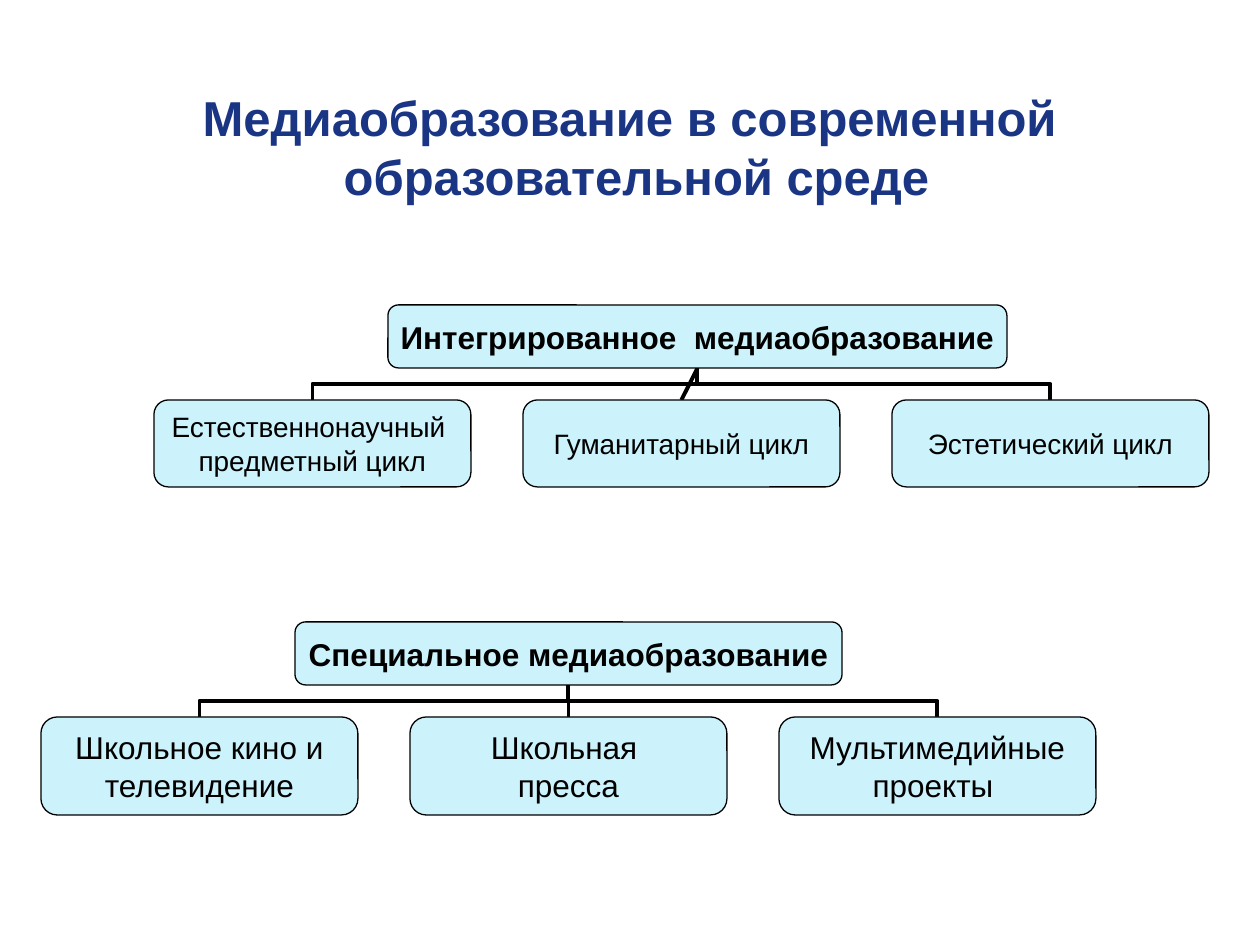
from lxml import etree
from pptx import Presentation
from pptx.dml.color import RGBColor
from pptx.enum.shapes import MSO_CONNECTOR, MSO_SHAPE
from pptx.enum.text import MSO_ANCHOR, PP_ALIGN
from pptx.oxml.ns import qn
from pptx.util import Emu, Pt

ROUNDED = MSO_SHAPE.ROUNDED_RECTANGLE
STRAIGHT, ELBOW = MSO_CONNECTOR.STRAIGHT, MSO_CONNECTOR.ELBOW
CENTER, MIDDLE = PP_ALIGN.CENTER, MSO_ANCHOR.MIDDLE
TOP_SIDE, BOTTOM_SIDE = 0, 2
EMU_PER_PX = 914400 // 126
QUARTER_TURN = "5400000"
BACK_OF_TREE = 2


def px(length):
    return Emu(round(length * EMU_PER_PX))


def color(hex_string):
    return RGBColor.from_string(hex_string)


class Diagram:
    font_name = "Arial"
    title_color = "193583"
    ink = "000000"
    box_fill = "CCF3FB"
    child_width = 317
    child_pitch = 369
    parent_height = 63

    def __init__(self, slide):
        self.slide = slide

    def set_text(self, shape, text, size, hex_color, bold=False, wrap=False):
        frame = shape.text_frame
        frame.word_wrap = wrap
        frame.vertical_anchor = MIDDLE
        frame.text = text
        for paragraph in frame.paragraphs:
            paragraph.alignment = CENTER
            paragraph.font.name = self.font_name
            paragraph.font.size = Pt(size)
            paragraph.font.bold = bold
            paragraph.font.color.rgb = color(hex_color)

    def title(self, text, left, top, width, height):
        box = self.slide.shapes.add_textbox(px(left), px(top), px(width), px(height))
        self.set_text(box, text, 28, self.title_color, bold=True, wrap=True)

    def box(self, text, left, top, width, height, size, bold=False):
        shape = self.slide.shapes.add_shape(
            ROUNDED, px(left), px(top), px(width), px(height))
        shape.shadow.inherit = False
        shape.fill.solid()
        shape.fill.fore_color.rgb = color(self.box_fill)
        shape.line.color.rgb = color(self.ink)
        shape.line.width = Pt(0.75)
        self.set_text(shape, text, size, self.ink, bold)
        return shape

    def connector(self, kind, begin_x, begin_y, end_x, end_y):
        """Add a line behind the boxes."""
        line = self.slide.shapes.add_connector(
            kind, Emu(begin_x), Emu(begin_y), Emu(end_x), Emu(end_y))
        line.line.color.rgb = color(self.ink)
        line.line.width = Pt(2.25)
        element = line._element
        etree.SubElement(element.spPr, qn("a:effectLst"))
        self.slide.shapes._spTree.insert(BACK_OF_TREE, element)
        return line

    def straight(self, parent, child):
        line = self.connector(STRAIGHT, 0, 0, 0, 0)
        line.begin_connect(child, TOP_SIDE)
        line.end_connect(parent, BOTTOM_SIDE)

    def elbow(self, parent, child):
        """Join parent and child by a down-across-down line: an elbow turned by 90 degrees."""
        start_x, start_y = parent.left + parent.width // 2, parent.top + parent.height
        end_x, end_y = child.left + child.width // 2, child.top
        middle_x, middle_y = (start_x + end_x) // 2, (start_y + end_y) // 2
        half_across, half_down = (end_x - start_x) // 2, (end_y - start_y) // 2
        line = self.connector(
            ELBOW, middle_x - half_down, middle_y + half_across,
            middle_x + half_down, middle_y - half_across)
        line._element.spPr.find(qn("a:xfrm")).set("rot", QUARTER_TURN)

    def tree(self, heading, heading_left, heading_top, heading_width,
             labels, left, top, height, size):
        parent = self.box(heading, heading_left, heading_top, heading_width,
                          self.parent_height, 18, bold=True)
        children = [
            self.box(label, left + index * self.child_pitch, top,
                     self.child_width, height, size)
            for index, label in enumerate(labels)
        ]
        first, middle, last = children
        self.elbow(parent, first)
        self.straight(parent, middle)
        self.elbow(parent, last)


def main():
    presentation = Presentation()
    presentation.slide_width = px(1260)
    presentation.slide_height = px(945)
    slide = presentation.slides.add_slide(presentation.slide_layouts[6])
    diagram = Diagram(slide)

    diagram.title("Медиаобразование в современной \vобразовательной среде",
                  64, 59, 1145, 175)
    diagram.tree(
        "Специальное медиаобразование", 295, 622, 547,
        ["Школьное кино и\nтелевидение", "Школьная \nпресса",
         "Мультимедийные\nпроекты "],
        left=41, top=717, height=98, size=18)
    diagram.tree(
        "Интегрированное  медиаобразование", 388, 305, 619,
        ["Естественнонаучный \nпредметный цикл", "Гуманитарный цикл",
         "Эстетический цикл"],
        left=154, top=400, height=87, size=16)

    presentation.save("out.pptx")


if __name__ == "__main__":
    main()
